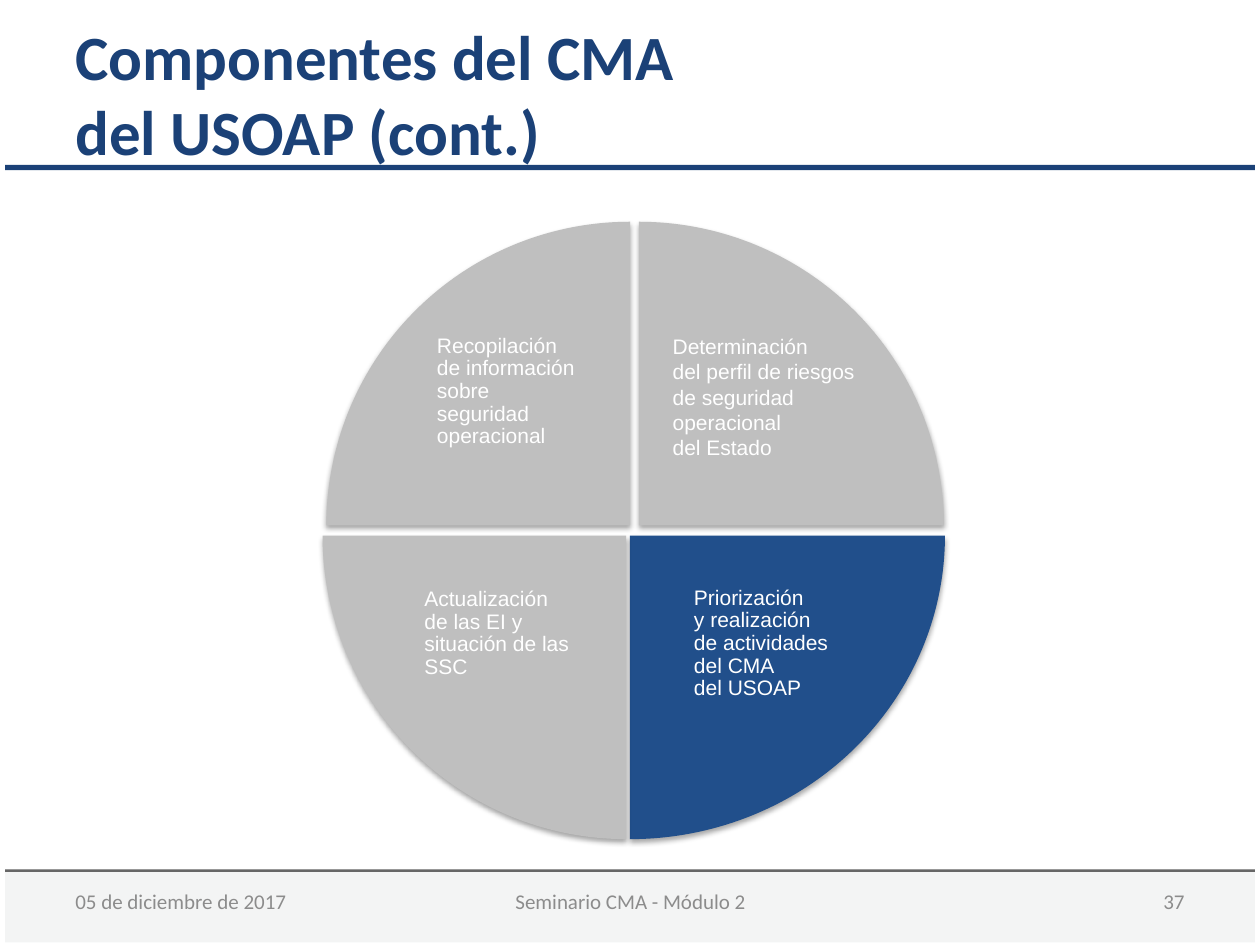
from copy import deepcopy
from math import cos, pi, radians, sin, tan
from lxml import etree
from pptx import Presentation
from pptx.dml.color import RGBColor
from pptx.enum.shapes import MSO_SHAPE as SHAPE
from pptx.enum.text import MSO_ANCHOR as ANCHOR, PP_ALIGN as ALIGN
from pptx.oxml.ns import qn
from pptx.util import Inches, Pt

THEME = {
    "navy": RGBColor.from_string("1B4177"),
    "active": RGBColor.from_string("214F8B"),
    "idle": RGBColor.from_string("BFBFBF"),
    "white": RGBColor.from_string("FFFFFF"),
    "band": RGBColor.from_string("F3F4F4"),
    "rule": RGBColor.from_string("666666"),
    "muted": RGBColor.from_string("8C8C8C"),
    "head": "Calibri",
    "body": "Arial",
    "title_size": Pt(36),
    "text_size": Pt(12),
}

prs = Presentation()
prs.slide_width, prs.slide_height = Inches(10), Inches(7.5)
col, row = prs.slide_width / 100, prs.slide_height / 75
slide = prs.slides.add_slide(prs.slide_layouts[6])


def grid(x, y, w, h):
    return [round(v * unit) for v, unit in zip((x, y, w, h), (col, row, col, row))]


def add_text(place, text, font, anchor=ANCHOR.TOP, align=ALIGN.LEFT, spacing=1.0):
    tf = slide.shapes.add_textbox(*grid(*place)).text_frame
    tf.word_wrap, tf.vertical_anchor = True, anchor
    tf.text = text
    for p in tf.paragraphs:
        p.alignment, p.line_spacing = align, spacing
        for r in p.runs:
            r.font.color.rgb = font["color"]
            for name in ("name", "size", "bold"):
                setattr(r.font, name, font[name])
        for br in p._p.findall(qn("a:br")):
            br.append(deepcopy(p.runs[0]._r.rPr))


title_font = {"name": THEME["head"], "size": THEME["title_size"], "bold": True, "color": THEME["navy"]}
label_font = {"name": THEME["body"], "size": THEME["text_size"], "bold": False, "color": THEME["white"]}
footer_font = {"name": THEME["head"], "size": THEME["text_size"], "bold": False, "color": THEME["muted"]}

for y, h, color in [(69, 5.8, "band"), (69, 0.2, "rule"), (13.1, 0.4, "navy")]:
    s = slide.shapes.add_shape(SHAPE.RECTANGLE, *grid(0.4, y, 99.2, h))
    s.shadow.inherit = False
    s.fill.solid()
    s.fill.fore_color.rgb = THEME[color]
    s.line.fill.background()

add_text((5, 1.1, 90, 12.5), "Componentes del CMA\vdel USOAP (cont.)", title_font, ANCHOR.MIDDLE)

radius = 24.1
handle = 4 / 3 * tan(pi / 16)
quadrants = [
    (50.7, 41.7, 24.2, 270, "idle"),
    (50, 42.5, 25, 0, "active"),
    (49.7, 42.5, radius, 90, "idle"),
    (50, 41.7, radius, 180, "idle"),
]
for cx, cy, rx, start, color in quadrants:
    turns = [(start, 0)]
    for a in (start, start + 45):
        turns += [(a, handle), (a + 45, -handle), (a + 45, 0)]
    points = [
        (
            (cx + rx * (cos(radians(a)) - k * sin(radians(a)))) * col,
            (cy + radius * (sin(radians(a)) + k * cos(radians(a)))) * row,
        )
        for a, k in turns
    ]
    builder = slide.shapes.build_freeform(*points[0])
    builder.add_line_segments(points[1:] + [(cx * col, cy * row)], close=True)
    s = builder.convert_to_shape()
    segments = list(s._element.iter(qn("a:lnTo")))
    for i in (0, 3):
        curve = etree.Element(qn("a:cubicBezTo"))
        segments[i].addprevious(curve)
        for segment in segments[i:i + 3]:
            curve.append(segment[0])
            segment.getparent().remove(segment)
    s.fill.solid()
    s.fill.fore_color.rgb = THEME[color]
    s.line.fill.background()
    s.shadow.inherit = False
    effects = s._element.spPr.find(qn("a:effectLst"))
    shadow = etree.SubElement(
        effects, qn("a:outerShdw"), blurRad=str(Pt(3.1)), dist=str(Pt(1.8)), dir="5400000", rotWithShape="0"
    )
    shade = etree.SubElement(shadow, qn("a:srgbClr"), val="000000")
    etree.SubElement(shade, qn("a:alpha"), val="35000")

labels = [
    ((52.4, 26, 18.9, 11.1), "Determinación\vdel perfil de riesgos\vde seguridad operacional\ndel Estado", 1.0),
    ((32.7, 46.2, 14.2, 8.3), "Actualización\vde las EI y situación de las SSC", 0.9),
    ((33.7, 26.1, 13.4, 9.3), "Recopilación de información sobre seguridad operacional", 0.9),
    ((54.1, 46.1, 15, 10.1), "Priorización\vy realización\vde actividades del CMA\vdel USOAP", 0.9),
]
for place, text, spacing in labels:
    add_text(place, text, label_font, spacing=spacing)

footers = [
    (5, 23.3, "05 de diciembre de 2017", ALIGN.LEFT),
    (34.2, 31.7, "Seminario CMA - Módulo 2", ALIGN.CENTER),
    (71.7, 23.3, "37", ALIGN.RIGHT),
]
for x, w, text, align in footers:
    add_text((x, 69.5, w, 4), text, footer_font, ANCHOR.MIDDLE, align)

prs.save("out.pptx")
